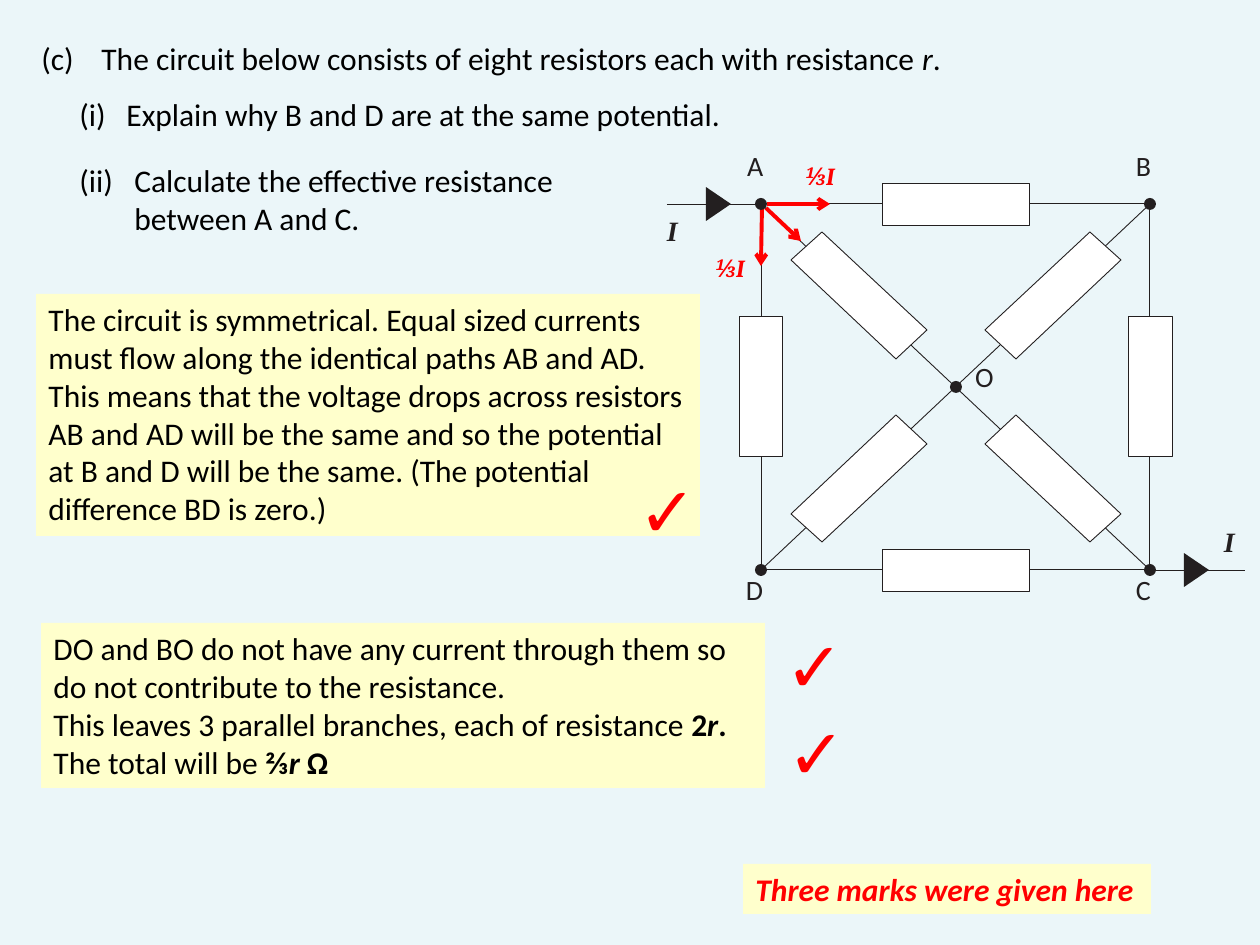
"""Build the marked exam answer on a network of eight resistors."""
from itertools import product

from lxml.etree import SubElement
from pptx import Presentation
from pptx.dml.color import RGBColor
from pptx.enum.shapes import MSO_CONNECTOR as LINE, MSO_SHAPE as SHAPE
from pptx.enum.text import MSO_ANCHOR, MSO_AUTO_SIZE as FIT, PP_ALIGN
from pptx.oxml.ns import qn
from pptx.util import Emu, Pt

SCALE = 914400 / 126
COLORS = {"page": "EBF6F9", "note": "FFFFCC", "ink": "231F20",
          "mark": "FF0000", "text": "000000", "white": "FFFFFF"}

deck = Presentation()
deck.slide_width, deck.slide_height = Emu(round(1260 * SCALE)), Emu(round(945 * SCALE))
page = deck.slides.add_slide(deck.slide_layouts[6])
page.background.fill.solid()
page.background.fill.fore_color.rgb = RGBColor.from_string(COLORS["page"])


def paint(shape, fill=None, line=None):
    shape.shadow.inherit = False
    if fill:
        shape.fill.solid()
        shape.fill.fore_color.rgb = RGBColor.from_string(COLORS[fill])
    else:
        shape.fill.background()
    if line:
        shape.line.color.rgb = RGBColor.from_string(COLORS[line])
        shape.line.width = Pt(0.5)
    else:
        shape.line.fill.background()


def add_text(paragraphs, place, size=18, font="Calibri", color="text", style="",
             fill=None, wrap=True, inset=True, margin=0, hanging=0):
    place = [Emu(round(length * SCALE)) for length in place]
    if fill:
        box = page.shapes.add_shape(SHAPE.RECTANGLE, *place)
        paint(box, fill)
    else:
        box = page.shapes.add_textbox(*place)
    frame = box.text_frame
    frame.word_wrap = wrap
    frame.vertical_anchor = MSO_ANCHOR.TOP
    frame.auto_size = FIT.SHAPE_TO_FIT_TEXT if inset else FIT.NONE
    if not inset:
        frame.margin_left = frame.margin_right = frame.margin_top = frame.margin_bottom = 0
    if isinstance(paragraphs, str):
        paragraphs = [[(paragraphs, style)]]
    for index, spans in enumerate(paragraphs):
        para = frame.add_paragraph() if index else frame.paragraphs[0]
        para.alignment = PP_ALIGN.LEFT
        if margin:
            properties = para._p.get_or_add_pPr()
            properties.set("marL", str(round(margin * SCALE)))
            properties.set("indent", str(round(-hanging * SCALE)))
        for text, look in spans:
            span = para.add_run()
            span.text = text
            span.font.size, span.font.name = Pt(size), font
            span.font.bold, span.font.italic = "b" in look, "i" in look
            span.font.color.rgb = RGBColor.from_string(COLORS[color])
    return box


add_text([[("(c)\tThe circuit below consists of eight resistors each with resistance ", ""),
           ("r", "i"), (".", "")]], (29, 33, 1172, 50), margin=60, hanging=60)
add_text("(i)\tExplain why B and D are at the same potential.", (4, 89, 772, 50),
         margin=110, hanging=47)
part_two = add_text([[("Calculate the effective resistance", "")],
                     [("between A and C.", "")]], (4, 155, 595, 89), margin=118, hanging=55)
first, second = part_two.text_frame.paragraphs
SubElement(first._p.pPr, qn("a:buFont"), typeface="+mj-lt")
SubElement(first._p.pPr, qn("a:buAutoNum"), type="romanLcParenBoth", startAt="2")
second._p.pPr.set("indent", "0")

left, right, top, bottom = 761, 1150, 204, 570
middle_x, middle_y = 956, 387
wire_frame = page.shapes.add_shape(
    SHAPE.RECTANGLE, *[Emu(round(n * SCALE)) for n in (left, top, right - left, bottom - top)])
paint(wire_frame, line="ink")

wires = [(left, bottom, right, top), (left, top, right, bottom),
         (667, top, left, top), (right, bottom, 1245, bottom)]
currents = [(767, 204, 830, 204), (762, 209, 761, 266), (766, 208, 801, 241)]
for ends in wires + currents:
    is_current = ends in currents
    connector = page.shapes.add_connector(LINE.STRAIGHT, *[Emu(round(n * SCALE)) for n in ends])
    connector.line.color.rgb = RGBColor.from_string(COLORS["mark" if is_current else "ink"])
    connector.line.width = Pt(2.25 if is_current else 0.5)
    if is_current:
        SubElement(connector.line._get_or_add_ln(), qn("a:tailEnd"), type="arrow")
    SubElement(connector._element.spPr, qn("a:effectLst"))

side_resistors = [(middle_x, top, 148, 42), (middle_x, bottom, 148, 42),
                  (left, middle_y, 44, 140), (right, middle_y, 44, 140)]
for x, y, width, height in side_resistors:
    resistor = page.shapes.add_shape(
        SHAPE.RECTANGLE,
        *[Emu(round(n * SCALE)) for n in (x - width / 2, y - height / 2, width, height)])
    paint(resistor, "white", "ink")

corners = [(165, 127), (60, 28), (29, 57), (134, 155)]
for sign_x, sign_y in product((-1, 1), repeat=2):
    points = [(middle_x + sign_x * x, middle_y + sign_y * y) for x, y in corners]
    builder = page.shapes.build_freeform(*points[0], scale=SCALE)
    builder.add_line_segments(points[1:], close=True)
    paint(builder.convert_to_shape(), "white", "ink")

for x, y in [*product((left, right), (top, bottom)), (middle_x, middle_y)]:
    node = page.shapes.add_shape(
        SHAPE.OVAL, *[Emu(round(n * SCALE)) for n in (x - 6, y - 6, 12, 12)])
    paint(node, "ink")

for x, y in [(706, top), (1184, bottom)]:
    builder = page.shapes.build_freeform(x, y - 17, scale=SCALE)
    builder.add_line_segments([(x, y + 17), (x + 25, y)], close=True)
    paint(builder.convert_to_shape(), "ink")

for letter, x, y in [("A", 747, 149), ("B", 1136, 149), ("O", 975, 360),
                     ("D", 746, 573), ("C", 1136, 573)]:
    add_text(letter, (x, y, 32, 40), size=16, color="ink", inset=False)
for x, y in [(667, 214), (1224, 525)]:
    add_text("I", (x, y, 14, 40), size=16, font="Times New Roman", color="ink",
             style="bi", inset=False)

add_text("The circuit is symmetrical. Equal sized currents must flow along the identical "
         "paths AB and AD. This means that the voltage drops across resistors AB and AD will "
         "be the same and so the potential at B and D will be the same. (The potential "
         "difference BD is zero.)", (36, 294, 664, 242), fill="note")
add_text([[("DO and BO do not have any current through them so do not contribute to the "
            "resistance.", "")],
          [("This leaves 3 parallel branches, each of resistance ", ""), ("2", "b"),
           ("r", "bi"), (". ", "b"), ("The total will be ", ""), ("⅔", "b"),
           ("r ", "bi"), ("Ω", "b")]], (41, 623, 724, 165), fill="note")

for x, y in [(792, 155), (702, 247)]:
    add_text("⅓I", (x, y, 57, 43), size=14, font="Cambria", color="mark",
             style="bi", wrap=False)
for x, y in [(626, 461), (773, 616), (775, 703)]:
    add_text("✓", (x, y, 42, 98), size=40, color="mark")
add_text("Three marks were given here", (743, 864, 408, 50), color="mark",
         style="bi", fill="note", wrap=False)

deck.save("out.pptx")
